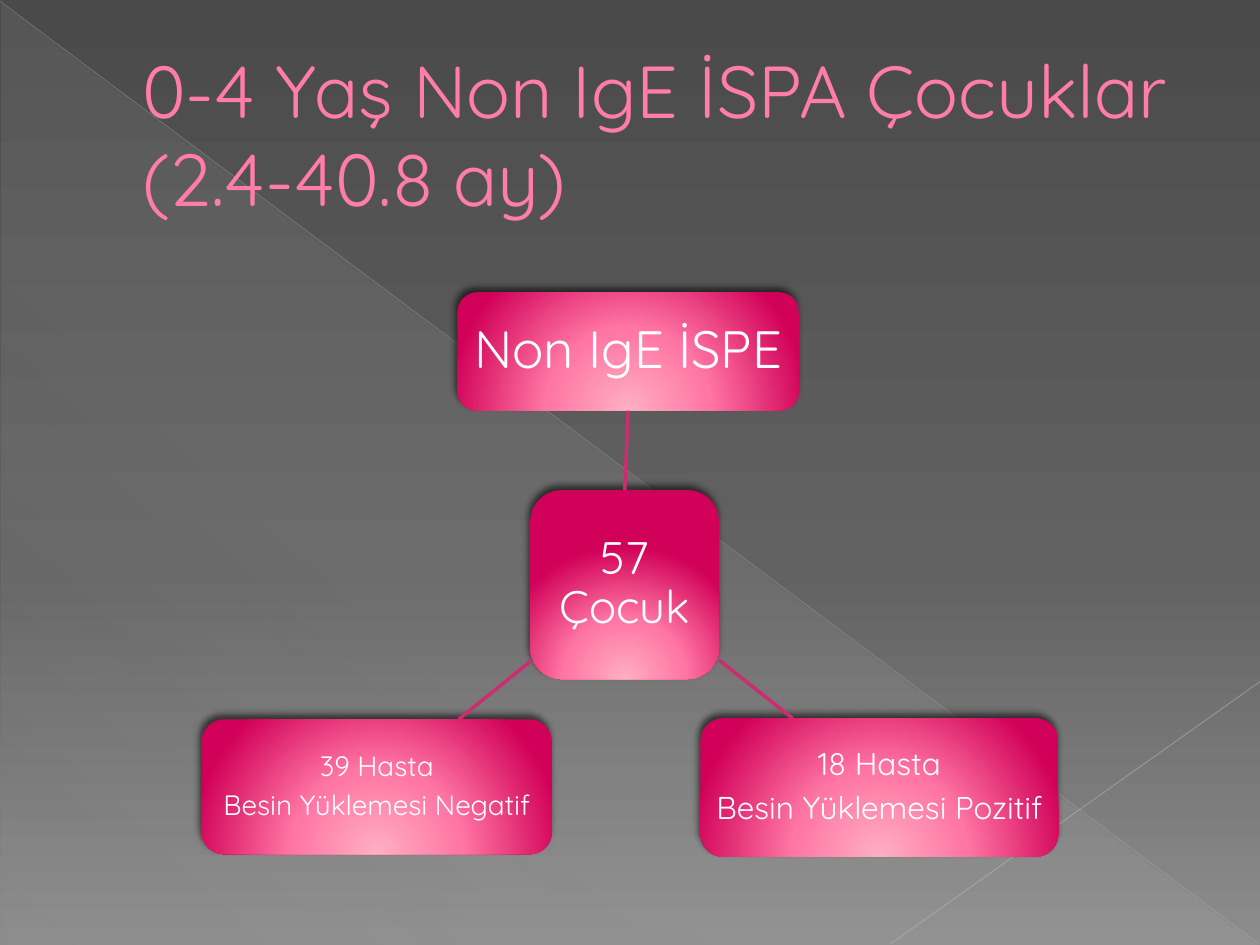
from pptx import Presentation
from pptx.dml.color import RGBColor
from pptx.enum.shapes import MSO_CONNECTOR, MSO_SHAPE
from pptx.enum.text import MSO_ANCHOR, PP_ALIGN
from pptx.oxml import parse_xml
from pptx.oxml.ns import nsdecls
from pptx.util import Pt

STRAIGHT = MSO_CONNECTOR.STRAIGHT
ROUNDED = MSO_SHAPE.ROUNDED_RECTANGLE
TRIANGLE = MSO_SHAPE.RIGHT_TRIANGLE
MIDDLE = MSO_ANCHOR.MIDDLE
CENTER = PP_ALIGN.CENTER

WHITE = RGBColor(0xFF, 0xFF, 0xFF)
BLACK = RGBColor(0x00, 0x00, 0x00)
TITLE_PINK = RGBColor(0xFF, 0x7D, 0xA7)
TITLE_EDGE = RGBColor(0xB1, 0x27, 0x61)
LINK_PINK = RGBColor(0xCC, 0x2D, 0x70)
FALLING_GRAY = RGBColor(0xBF, 0xBF, 0xBF)
RISING_GRAY = RGBColor(0xC6, 0xC6, 0xC6)
VEIL_GRAY = RGBColor(0xD2, 0xD2, 0xD2)
PAGE_STOPS = [(0, RGBColor(0x4A, 0x4A, 0x4A), 100),
              (60, RGBColor(0x62, 0x62, 0x62), 100),
              (100, RGBColor(0x8C, 0x8C, 0x8C), 100)]
VEIL_STOPS = [(0, VEIL_GRAY, 10), (70, VEIL_GRAY, 8), (100, VEIL_GRAY, 1)]
BOX_STOPS = [(0, RGBColor(0xFF, 0xAF, 0xC5), 100),
             (46, RGBColor(0xFF, 0x75, 0xA3), 100),
             (100, RGBColor(0xD1, 0x00, 0x58), 100)]
BOX_GLOW = ('<a:path path="circle"><a:fillToRect l="50000" t="155000" '
            'r="50000" b="-55000"/></a:path>')
FONT = "Quicksand"


def set_values(target, values):
    """Set attributes of an object from a dict."""
    for name, value in values.items():
        setattr(target, name, value)


def color_xml(color, opacity):
    """Return a colour element with an opacity in percent."""
    return (f'<a:srgbClr val="{color}"><a:alpha val="{opacity * 1000}"/>'
            '</a:srgbClr>')


def linear(angle):
    """Return the direction element of a linear gradient."""
    return f'<a:lin ang="{angle * 60000}" scaled="0"/>'


def paint_gradient(owner, element, stops, direction):
    """Give a shape or a background a gradient fill."""
    owner.fill.solid()
    solid = element.xpath(".//a:solidFill")[0]
    marks = "".join(f'<a:gs pos="{place * 1000}">{color_xml(color, opacity)}</a:gs>'
                    for place, color, opacity in stops)
    gradient = parse_xml(f'<a:gradFill {nsdecls("a")} rotWithShape="1">'
                         f'<a:gsLst>{marks}</a:gsLst>{direction}</a:gradFill>')
    solid.getparent().replace(solid, gradient)


def add_filled_shape(page, kind, area, stops, direction):
    """Add a preset shape with a gradient and no outline."""
    shape = page.shapes.add_shape(kind, *map(Pt, area))
    paint_gradient(shape, shape._element.spPr, stops, direction)
    shape.line.fill.background()
    shape.shadow.inherit = False
    return shape


def add_line(page, start, end, color, width, opacity=100):
    """Add a straight line without a shadow."""
    line = page.shapes.add_connector(STRAIGHT, *map(Pt, start + end))
    line.line.width = Pt(width)
    line.line.fill.solid()
    line.line.color.rgb = color
    properties = line._element.spPr
    solid = properties.xpath("./a:ln/a:solidFill")[0]
    solid.replace(solid[0], parse_xml(color_xml(color, opacity).replace(
        "<a:srgbClr", f'<a:srgbClr {nsdecls("a")}', 1)))
    properties.append(parse_xml(f'<a:effectLst {nsdecls("a")}/>'))
    return line


def add_title(page, text):
    """Add the indented, outlined title."""
    box = page.shapes.add_textbox(Pt(36), Pt(20.9), Pt(648), Pt(110.2))
    set_values(box.text_frame, {"word_wrap": True, "vertical_anchor": MIDDLE})
    para = box.text_frame.paragraphs[0]
    para._p.get_or_add_pPr().set("marL", str(Pt(38.2)))
    span = para.add_run()
    span.text = text
    set_values(span.font, {"name": FONT, "size": Pt(42)})
    span.font.color.rgb = TITLE_PINK
    span._r.get_or_add_rPr().insert(0, parse_xml(
        f'<a:ln {nsdecls("a")} w="{Pt(0.5)}"><a:solidFill>'
        f'{color_xml(TITLE_EDGE, 100)}</a:solidFill></a:ln>'))


def add_node(page, area, lines, size, inset):
    """Add a glowing rounded box with centred text and a shadow."""
    box = add_filled_shape(page, ROUNDED, area, BOX_STOPS, BOX_GLOW)
    box._element.spPr.xpath("./a:effectLst")[0].append(parse_xml(
        f'<a:outerShdw {nsdecls("a")} blurRad="{Pt(4)}" dist="{Pt(3)}" '
        f'dir="{245 * 60000}" rotWithShape="0">{color_xml(BLACK, 60)}'
        '</a:outerShdw>'))
    frame = box.text_frame
    frame.text = "\n".join(lines)
    sides = ("left", "top", "right", "bottom")
    set_values(frame, {"word_wrap": True, "vertical_anchor": MIDDLE,
                       **{f"margin_{side}": Pt(inset) for side in sides}})
    for para in frame.paragraphs:
        set_values(para, {"alignment": CENTER, "line_spacing": 0.9,
                          "space_after": Pt(round(0.3 * size, 1))})
        set_values(para.font, {"name": FONT, "size": Pt(size)})
        para.font.color.rgb = WHITE
    return box


def add_backdrop(page):
    """Paint the background with its veil and two fine lines."""
    paint_gradient(page.background, page._element, PAGE_STOPS, linear(90))
    add_filled_shape(page, TRIANGLE, (0.7, 1.4, 718.6, 538.6),
                     VEIL_STOPS, linear(133))
    add_line(page, (0, 0.7), (719.3, 539.3), FALLING_GRAY, 0.39, 35)
    add_line(page, (720, 389.5), (509, 539.3), RISING_GRAY, 0.47, 45)


def main():
    """Build the slide and save it."""
    deck = Presentation()
    deck.slide_width, deck.slide_height = Pt(720), Pt(540)
    page = deck.slides.add_slide(deck.slide_layouts[6])
    add_backdrop(page)
    add_title(page, "0-4 Yaş Non IgE İSPA Çocuklar (2.4-40.8 ay)")

    core = add_node(page, (303, 280.1, 108, 108), ["57 Çocuk"], 26, 5)
    group = add_node(page, (261.4, 167, 195.1, 67.7), ["Non IgE İSPE"], 30, 5.8)
    add_node(page, (400.3, 410.4, 204.5, 79.2),
             ["18 Hasta", "Besin Yüklemesi Pozitif"], 18, 3.6)
    add_node(page, (115.2, 411.1, 200.2, 77),
             ["39 Hasta", "Besin Yüklemesi Negatif"], 16, 2.9)

    trunk = add_line(page, (357, 280.1), (359, 234.7), LINK_PINK, 2)
    trunk.begin_connect(core, 0)
    trunk.end_connect(group, 2)
    add_line(page, (411, 377.3), (452.9, 410.4), LINK_PINK, 2)
    add_line(page, (303, 378), (262.1, 411.1), LINK_PINK, 2)
    deck.save("out.pptx")


if __name__ == "__main__":
    main()
